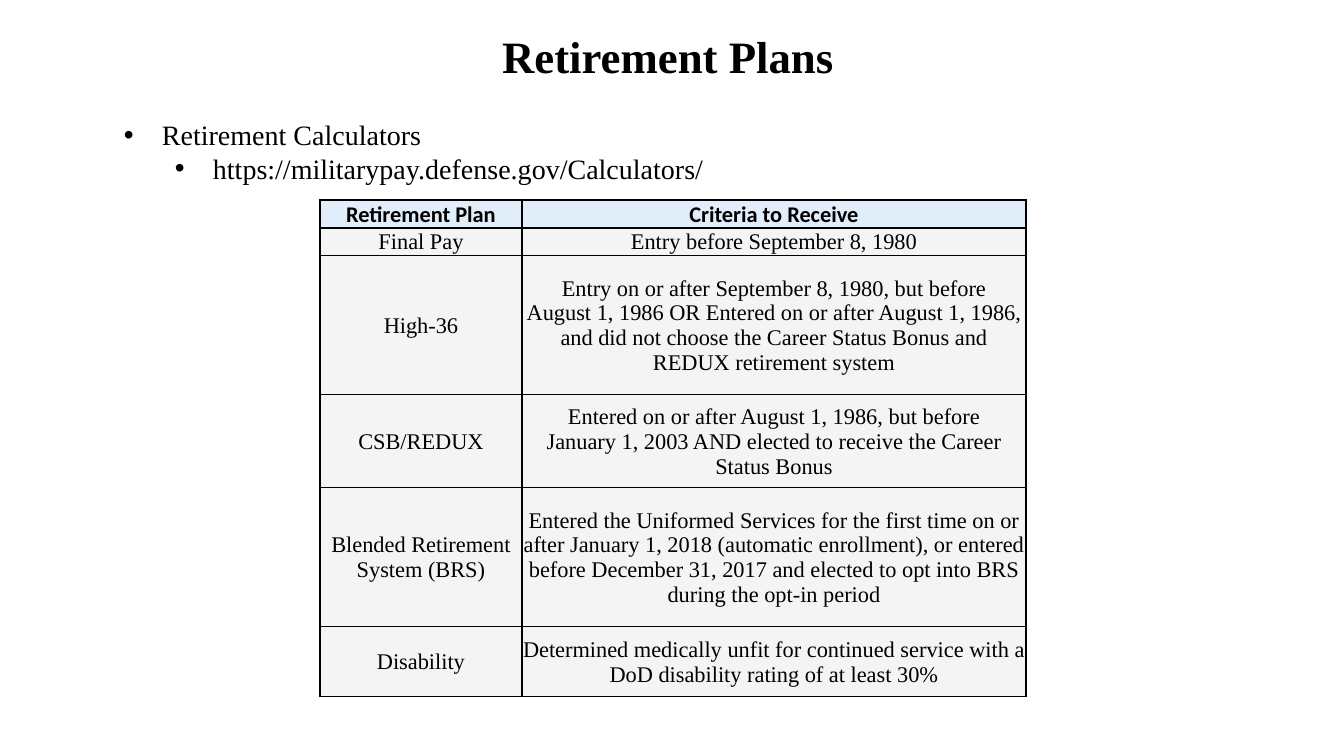
"""Build the Retirement Plans slide."""
from lxml import etree
from pptx import Presentation
from pptx.dml.color import RGBColor
from pptx.enum.text import MSO_ANCHOR, MSO_AUTO_SIZE, PP_ALIGN
from pptx.oxml import parse_xml
from pptx.oxml.ns import nsdecls, qn
from pptx.util import Emu, Pt

CENTER, LEFT = PP_ALIGN.CENTER, PP_ALIGN.LEFT
MIDDLE = MSO_ANCHOR.MIDDLE
FIT_SHAPE, NO_FIT = MSO_AUTO_SIZE.SHAPE_TO_FIT_TEXT, MSO_AUTO_SIZE.NONE
BLACK = RGBColor(0x00, 0x00, 0x00)
HEADER_BLUE = RGBColor(0xDA, 0xE9, 0xF8)
BODY_GRAY = RGBColor(0xF2, 0xF2, 0xF2)
SERIF, SANS = "Times New Roman", "Calibri"
EMU_PER_PX = 914400 / 100.8

COLUMN_WIDTHS = [202, 504]
ROW_HEIGHTS = [27, 27, 139, 93, 139, 70]
PLANS = [
    ("Retirement Plan", "Criteria to Receive"),
    ("Final Pay", "Entry before September 8, 1980"),
    ("High-36",
     "Entry on or after September 8, 1980, but before\n"
     "August 1, 1986 OR Entered on or after August 1, 1986, and did not "
     "choose the Career Status Bonus and REDUX retirement system"),
    ("CSB/REDUX",
     "Entered on or after August 1, 1986, but before\n"
     "January 1, 2003 AND elected to receive the Career Status Bonus"),
    ("Blended Retirement System (BRS)",
     "Entered the Uniformed Services for the first time on or after "
     "January 1, 2018 (automatic enrollment), or entered before "
     "December 31, 2017 and elected to opt into BRS during the opt-in period"),
    ("Disability",
     "Determined medically unfit for continued service with a DoD "
     "disability rating of at least 30%"),
]
BULLETS = [
    ("Retirement Calculators", 0, 38),
    ("https://militarypay.defense.gov/Calculators/", 1, 89),
]


def px(length):
    return Emu(round(length * EMU_PER_PX))


def write(paragraph, text, size=16, font=SERIF, bold=False, align=CENTER):
    paragraph.text = text
    paragraph.alignment = align
    paragraph.font.size = Pt(size)
    paragraph.font.name = font
    paragraph.font.bold = bold
    paragraph.font.color.rgb = BLACK


def add_title(page, text):
    title = page.shapes.title
    title.left, title.top, title.width, title.height = map(px, (0, 1, 1336, 151))
    frame = title.text_frame
    frame.auto_size = NO_FIT
    frame.vertical_anchor = MIDDLE
    frame.margin_bottom = px(41)
    write(frame.paragraphs[0], text, size=32, bold=True)
    frame.paragraphs[0].line_spacing = 0.9


def add_bullets(page, bullets):
    box = page.shapes.add_textbox(px(114), px(113), px(1109), px(78))
    frame = box.text_frame
    frame.word_wrap = True
    frame.auto_size = FIT_SHAPE
    for index, (text, level, indent) in enumerate(bullets):
        paragraph = frame.add_paragraph() if index else frame.paragraphs[0]
        paragraph.level = level
        properties = paragraph._p.get_or_add_pPr()
        properties.set("marL", str(px(indent)))
        properties.set("indent", str(px(-38)))
        etree.SubElement(properties, qn("a:buFont"), typeface="Arial")
        etree.SubElement(properties, qn("a:buChar"), char="•")
        write(paragraph, text, size=20, align=LEFT)


def style_cell(cell, color):
    cell.vertical_anchor = MIDDLE
    cell.margin_left = cell.margin_right = cell.margin_top = px(1)
    cell.margin_bottom = 0
    cell.fill.solid()
    cell.fill.fore_color.rgb = color
    properties = cell._tc.get_or_add_tcPr()
    fill_color = properties.find(qn("a:solidFill")).find(qn("a:srgbClr"))
    etree.SubElement(fill_color, qn("a:alpha"), val="79000")
    for index, side in enumerate(("lnL", "lnR", "lnT", "lnB")):
        border = parse_xml(
            f'<a:{side} {nsdecls("a")} w="{Pt(1)}"><a:solidFill>'
            f'<a:srgbClr val="{BLACK}"/></a:solidFill></a:{side}>')
        properties.insert(index, border)


def add_plan_table(page, plans):
    table = page.shapes.add_table(
        len(plans), len(COLUMN_WIDTHS), px(320), px(200),
        px(sum(COLUMN_WIDTHS)), px(sum(ROW_HEIGHTS))).table
    for column, width in zip(table.columns, COLUMN_WIDTHS):
        column.width = px(width)
    for index, (row, height, texts) in enumerate(zip(table.rows, ROW_HEIGHTS, plans)):
        row.height = px(height)
        header = index == 0
        for cell, text in zip(row.cells, texts):
            style_cell(cell, HEADER_BLUE if header else BODY_GRAY)
            cell.text = text
            for paragraph in cell.text_frame.paragraphs:
                write(paragraph, paragraph.text, font=SANS if header else SERIF,
                      bold=header)


def main():
    deck = Presentation()
    deck.slide_width, deck.slide_height = px(1344), px(756)
    page = deck.slides.add_slide(deck.slide_layouts[5])
    add_title(page, "Retirement Plans")
    add_bullets(page, BULLETS)
    add_plan_table(page, PLANS)
    deck.save("out.pptx")


if __name__ == "__main__":
    main()
